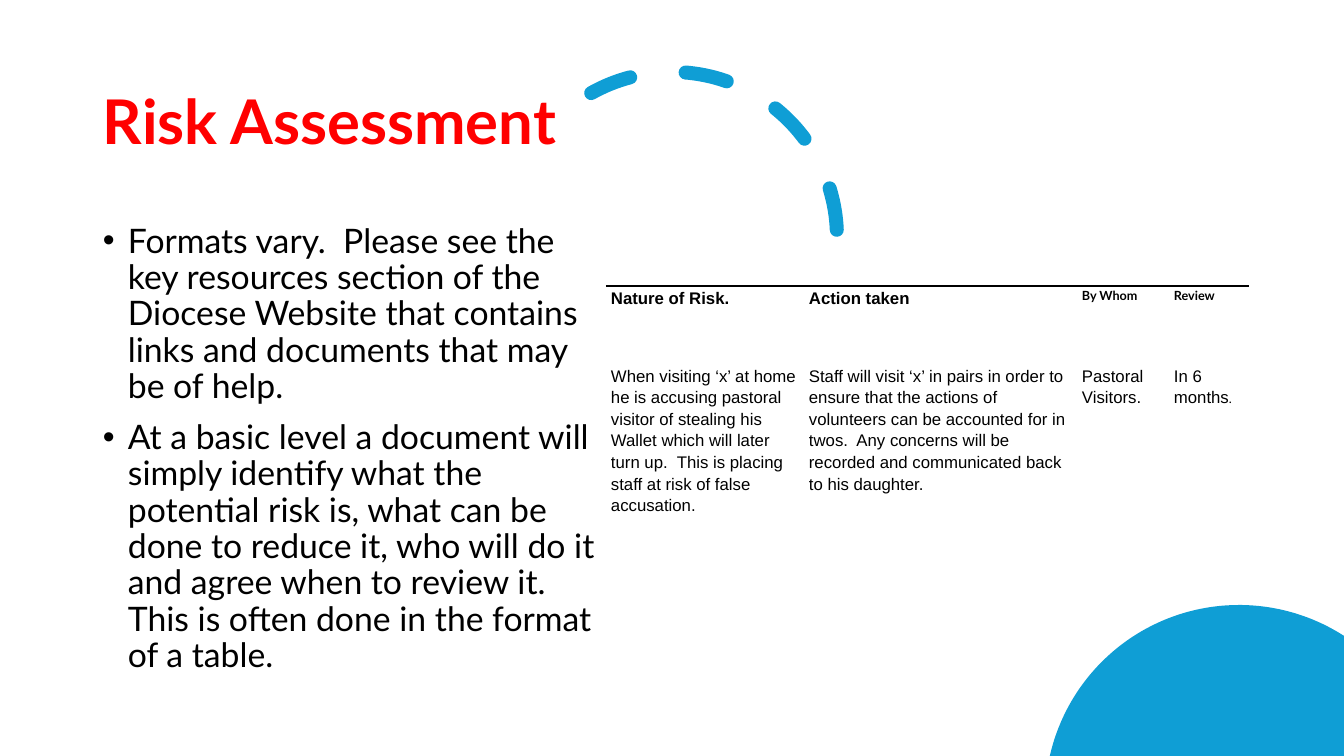
from math import acos, asin, cos, pi, sin

from lxml import etree
from pptx import Presentation
from pptx.dml.color import RGBColor
from pptx.enum.dml import MSO_LINE
from pptx.enum.shapes import MSO_SHAPE
from pptx.enum.text import MSO_ANCHOR
from pptx.oxml.ns import qn
from pptx.util import Emu, Pt

ARC, DASH = MSO_SHAPE.ARC, MSO_LINE.DASH
TOP, MIDDLE = MSO_ANCHOR.TOP, MSO_ANCHOR.MIDDLE

WIDTH, HEIGHT = 1344, 756
SCALE = 12192000 / WIDTH
COLORS = {"blue": "0F9ED5", "red": "FF0000", "black": "000000"}
NO_STYLE = "{2D5ABB26-0587-4C30-8999-92F81FD0307C}"

TITLE = {"size": Pt(44), "name": "Lato", "bold": True}
BODY = {"size": Pt(24.1), "name": "Lato"}
CELL = {"size": Pt(12), "name": "Arial"}
CELL_BOLD = {**CELL, "bold": True}
SMALL = {"size": Pt(9), "name": "Lato"}
SMALL_BOLD = {**SMALL, "bold": True}
BODY_PARAGRAPH = {"line_spacing": 0.9, "space_before": Pt(10)}
CELL_PARAGRAPH = {"line_spacing": 1.15, "space_after": Pt(8)}


def px(n):
    return Emu(round(n * SCALE))


def rgb(name):
    return RGBColor.from_string(COLORS[name])


def assign(target, values):
    for key, value in values.items():
        setattr(target, key, value)


class SlideBuilder:
    def __init__(self, prs):
        self.s = prs.slides.add_slide(prs.slide_layouts[6])

    def add_runs(self, p, runs, paragraph, color="black"):
        assign(p, paragraph)
        for text, font in runs:
            r = p.add_run()
            r.text = text
            assign(r.font, font)
            r.font.color.rgb = rgb(color)

    def bullet(self, p, indent):
        pPr = p._p.get_or_add_pPr()
        pPr.set("marL", str(px(indent)))
        pPr.set("indent", str(-px(indent)))
        etree.SubElement(pPr, qn("a:buFont")).set("typeface", "Arial")
        etree.SubElement(pPr, qn("a:buChar")).set("char", "•")

    def text(self, box, paragraphs, font, paragraph, color="black",
             anchor=TOP, indent=0):
        tf = self.s.shapes.add_textbox(*map(px, box)).text_frame
        assign(tf, {"word_wrap": True, "vertical_anchor": anchor})
        for i, text in enumerate(paragraphs):
            p = tf.add_paragraph() if i else tf.paragraphs[0]
            self.add_runs(p, [(text, font)], paragraph, color)
            if indent:
                self.bullet(p, indent)

    def dashed_arc(self, box, start, end, color, width):
        sp = self.s.shapes.add_shape(ARC, *map(px, box))
        sp.shadow.inherit = False
        sp.adjustments[0], sp.adjustments[1] = start, end
        sp.fill.background()
        sp.line.color.rgb = rgb(color)
        assign(sp.line, {"width": Pt(width), "dash_style": DASH})
        sp.line._get_or_add_ln().set("cap", "rnd")

    def cropped_disc(self, cx, cy, radius, color, steps=90):
        """Disc cut off by the bottom and right slide edges."""
        first = pi - asin((cy - HEIGHT) / radius)
        last = acos((WIDTH - cx) / radius)
        angles = [first + (last - first) * i / steps for i in range(steps + 1)]
        points = [(px(cx + radius * cos(a)), px(cy - radius * sin(a)))
                  for a in angles]
        builder = self.s.shapes.build_freeform(*points[0])
        builder.add_line_segments(points[1:] + [(px(WIDTH), px(HEIGHT))])
        sp = builder.convert_to_shape()
        sp.shadow.inherit = False
        sp.fill.solid()
        sp.fill.fore_color.rgb = rgb(color)
        sp.line.fill.background()

    def top_border(self, cell, color, width):
        ln = etree.Element(qn("a:lnT"), w=str(Pt(width)))
        fill = etree.SubElement(ln, qn("a:solidFill"))
        etree.SubElement(fill, qn("a:srgbClr")).set("val", COLORS[color])
        cell._tc.get_or_add_tcPr().insert(0, ln)

    def table(self, left, top, widths, heights, rows):
        frame = self.s.shapes.add_table(
            len(rows), len(widths), px(left), px(top),
            px(sum(widths)), px(sum(heights)))
        table = frame.table
        assign(table, {"first_row": False, "horz_banding": False})
        table._tbl.tblPr.find(qn("a:tableStyleId")).text = NO_STYLE
        for column, width in zip(table.columns, widths):
            column.width = px(width)
        for row, height in zip(table.rows, heights):
            row.height = px(height)
        margins = {"margin_left": px(5), "margin_top": px(0),
                   "margin_right": px(4), "margin_bottom": px(7)}
        for i, row in enumerate(rows):
            for j, runs in enumerate(row):
                cell = table.cell(i, j)
                assign(cell, margins)
                cell.fill.background()
                p = cell.text_frame.paragraphs[0]
                self.add_runs(p, runs, CELL_PARAGRAPH)
                if i == 0:
                    self.top_border(cell, "black", 1)


def main():
    prs = Presentation()
    assign(prs, {"slide_width": px(WIDTH), "slide_height": px(HEIGHT)})
    slide = SlideBuilder(prs)

    # Decoration
    slide.cropped_disc(1239, 799, 194, "blue")
    slide.dashed_arc((507, 72, 330, 330), 144.42, 0, "blue", 10)

    # Title and bullets
    slide.text((93, 52, 580, 146), ["Risk Assessment"], TITLE,
               {"line_spacing": 0.9}, "red", MIDDLE)
    slide.text((93, 219, 513, 462), [
        "Formats vary.  Please see the key resources section of the Diocese "
        "Website that contains links and documents that may be of help.",
        "At a basic level a document will simply identify what the potential "
        "risk is, what can be done to reduce it, who will do it and agree "
        "when to review it.  This is often done in the format of a table.",
    ], BODY, BODY_PARAGRAPH, indent=25)

    # Risk table: each cell is a list of runs
    slide.table(606, 286, [198, 273, 92, 80], [78, 166], [
        [[("Nature of Risk.", CELL_BOLD)],
         [("Action taken", CELL_BOLD)],
         [("By Whom", SMALL_BOLD)],
         [("Review", SMALL_BOLD)]],
        [[("When visiting ‘x’ at home he is accusing pastoral visitor of "
           "stealing his Wallet which will later turn up.  This is placing "
           "staff at risk of false accusation.", CELL)],
         [("Staff will visit ‘x’ in pairs in order to ensure that the actions "
           "of volunteers can be accounted for in twos.  Any concerns will be "
           "recorded and communicated back to his daughter.", CELL)],
         [("Pastoral Visitors.", CELL)],
         [("In 6 months", CELL), (".", SMALL)]],
    ])

    prs.save("out.pptx")


if __name__ == "__main__":
    main()
